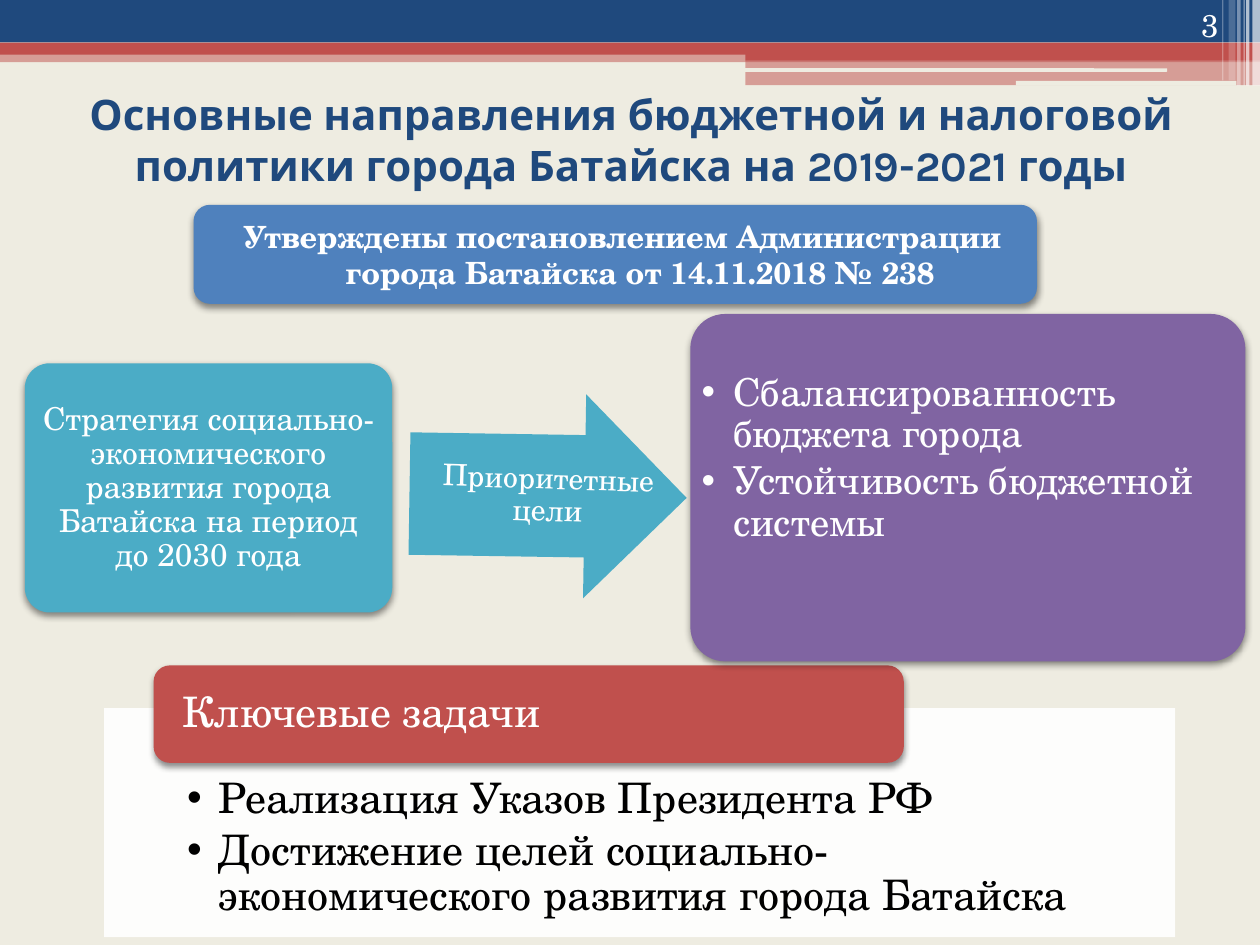
import pptx
import pptx.dml.color
import pptx.enum.shapes
import pptx.enum.text
import pptx.oxml.ns
import pptx.util
from lxml import etree

Pt = pptx.util.Pt
SHAPE = pptx.enum.shapes.MSO_SHAPE
ALIGN = pptx.enum.text.PP_ALIGN
ANCHOR = pptx.enum.text.MSO_ANCHOR
qn = pptx.oxml.ns.qn

SERIF = "TeX Gyre Schola"
NAVY, RED, BLUE = "1F497D", "C0504D", "4F81BD"
TEAL, PURPLE, CREAM = "4BACC6", "8064A2", "EEECE1"
WHITE, BLACK = "FFFFFF", "000000"

# Header bands: left, top, width, height, colour, opacity in percent
BANDS = [
    (0, 29, 720, 6.5, RED, 50),
    (0, 0, 720, 24.3, NAVY, 100),
    (0, 24.3, 720, 7, RED, 100),
    (426, 28, 294, 6.7, RED, 100),
    (426, 34.7, 294, 14, RED, 50),
]
# Light rules below the bands: left, top, width, height
RULES = [(425.5, 39, 241.5, 2), (580.5, 46.2, 126, 2.7)]
# Translucent stripes at the right edge: left, width, height, opacity
STRIPES = [
    (715.7, 4.3, 49, 65),
    (712, 2, 49, 65),
    (710.6, 0.7, 49, 60),
    (707, 2, 49, 40),
    (702, 4, 46, 20),
    (698.4, 0.7, 46, 30),
]


def set_attributes(target, values):
    for name, value in values.items():
        setattr(target, name, value)


def set_color(color_format, color, opacity=100):
    color_format.rgb = pptx.dml.color.RGBColor.from_string(color)
    if opacity < 100:
        element = color_format._xFill.find(qn("a:srgbClr"))
        etree.SubElement(element, qn("a:alpha"), val=str(opacity * 1000))


def add_shadow(shape):
    effects = shape._element.spPr.find(qn("a:effectLst"))
    shadow = etree.SubElement(
        effects, qn("a:outerShdw"), blurRad=str(Pt(4)), dist=str(Pt(2)),
        dir="5400000", rotWithShape="0")
    color = etree.SubElement(shadow, qn("a:srgbClr"), val=BLACK)
    etree.SubElement(color, qn("a:alpha"), val="45000")


def add_panel(slide, box, color, kind=SHAPE.RECTANGLE, opacity=100,
              corner=None, shadow=False):
    shape = slide.shapes.add_shape(kind, *map(Pt, box))
    shape.shadow.inherit = False
    shape.fill.solid()
    set_color(shape.fill.fore_color, color, opacity)
    shape.line.fill.background()
    if corner is not None:
        shape.adjustments[0] = corner
    if shadow:
        add_shadow(shape)
    return shape


def add_bullet(paragraph):
    properties = paragraph._p.get_or_add_pPr()
    set_indent(paragraph, 18, -18)
    etree.SubElement(properties, qn("a:buFont"), typeface="Arial")
    etree.SubElement(properties, qn("a:buChar"), char="•")


def set_indent(paragraph, margin, first_line):
    properties = paragraph._p.get_or_add_pPr()
    properties.set("marL", str(Pt(margin)))
    properties.set("indent", str(Pt(first_line)))


def write_text(shape, lines, size, color=WHITE, font=SERIF, bold=False,
               align=ALIGN.LEFT, anchor=ANCHOR.MIDDLE, spacing=0.9,
               after=0, margins=(7.2, 3.6), bullets=False):
    """Fill a shape with paragraphs; margins are horizontal and top/bottom."""
    side, top = margins
    frame = shape.text_frame
    set_attributes(frame, {
        "word_wrap": True, "vertical_anchor": anchor,
        "margin_left": Pt(side), "margin_right": Pt(side),
        "margin_top": Pt(top), "margin_bottom": Pt(min(top, 14)),
    })
    for index, line in enumerate(lines):
        paragraph = frame.add_paragraph() if index else frame.paragraphs[0]
        if bullets:
            add_bullet(paragraph)
        paragraph.text = line
        set_attributes(paragraph, {
            "alignment": align, "line_spacing": spacing,
            "space_after": Pt(after),
        })
        for run in paragraph.runs:
            set_attributes(run.font,
                           {"name": font, "size": Pt(size), "bold": bold})
            set_color(run.font.color, color)


def add_label(slide, box, lines, size, **text_format):
    label = slide.shapes.add_textbox(*map(Pt, box))
    write_text(label, lines, size, **text_format)
    return label


def add_header(slide):
    for *box, color, opacity in BANDS:
        add_panel(slide, box, color, opacity=opacity)
    for box in RULES:
        add_panel(slide, box, CREAM, SHAPE.ROUNDED_RECTANGLE)
    for left, width, height, opacity in STRIPES:
        add_panel(slide, (left, 0, width, height), WHITE, opacity=opacity)


def add_card(slide, box, color, corner=0.167):
    return add_panel(slide, box, color, SHAPE.ROUNDED_RECTANGLE,
                     corner=corner, shadow=True)


def main():
    presentation = pptx.Presentation()
    set_attributes(presentation,
                   {"slide_width": Pt(720), "slide_height": Pt(540)})
    slide = presentation.slides.add_slide(presentation.slide_layouts[6])
    slide.background.fill.solid()
    set_color(slide.background.fill.fore_color, CREAM)

    # Header, title and slide number
    add_header(slide)
    add_label(slide, (36.7, 37.4, 648, 84.2),
              ["Основные направления бюджетной и налоговой "
               "политики города Батайска на 2019-2021 годы"],
              24, color=NAVY, font="Karla", bold=True,
              align=ALIGN.CENTER, spacing=1.0)
    add_label(slide, (643.7, 0, 59.8, 28.8), ["3"], 18,
              align=ALIGN.RIGHT, anchor=ANCHOR.BOTTOM, spacing=1.0)

    # Approval banner
    banner = add_card(slide, (110.6, 117, 482, 56.6), BLUE)
    write_text(banner,
               ["Утверждены постановлением Администрации "
                "города Батайска от 14.11.2018 № 238"],
               17.5, bold=True, align=ALIGN.CENTER, spacing=1.0)
    set_indent(banner.text_frame.paragraphs[0], 28.8, -20.2)

    # Key tasks
    tasks = add_panel(slide, (59.5, 404.6, 612, 131), WHITE, opacity=90)
    write_text(tasks,
               ["Реализация Указов Президента РФ",
                "Достижение целей социально-экономического "
                "развития города Батайска"],
               24, color=BLACK, anchor=ANCHOR.TOP, after=3.6,
               margins=(47.5, 39.6), bullets=True)
    heading = add_card(slide, (87.8, 380.2, 428.7, 55.7), RED)
    write_text(heading, ["Ключевые задачи"], 24, margins=(14, 0))

    # Strategy, arrow and priority goals
    strategy = add_card(slide, (14.2, 207.6, 210, 142.4), TEAL, 0.1)
    write_text(strategy,
               ["Стратегия социально- экономического развития города "
                "Батайска на период\vдо 2030 года"],
               18, align=ALIGN.CENTER, margins=(1, 1))

    arrow_box = (234, 225, 158.4, 116.6)
    arrow = add_panel(slide, arrow_box, TEAL, SHAPE.RIGHT_ARROW, corner=0.6)
    arrow.rotation = 0.9
    caption = add_label(slide, arrow_box, ["Приоритетные цели"], 17,
                        align=ALIGN.CENTER, margins=(0, 0))
    caption.rotation = 1.8

    goals = add_card(slide, (394.5, 179.4, 317.2, 198.5), PURPLE, 0.1)
    write_text(goals,
               ["Сбалансированность бюджета города",
                "Устойчивость бюджетной системы"],
               22, anchor=ANCHOR.TOP, after=3, margins=(0.7, 28),
               bullets=True)

    presentation.save("out.pptx")


if __name__ == "__main__":
    main()
